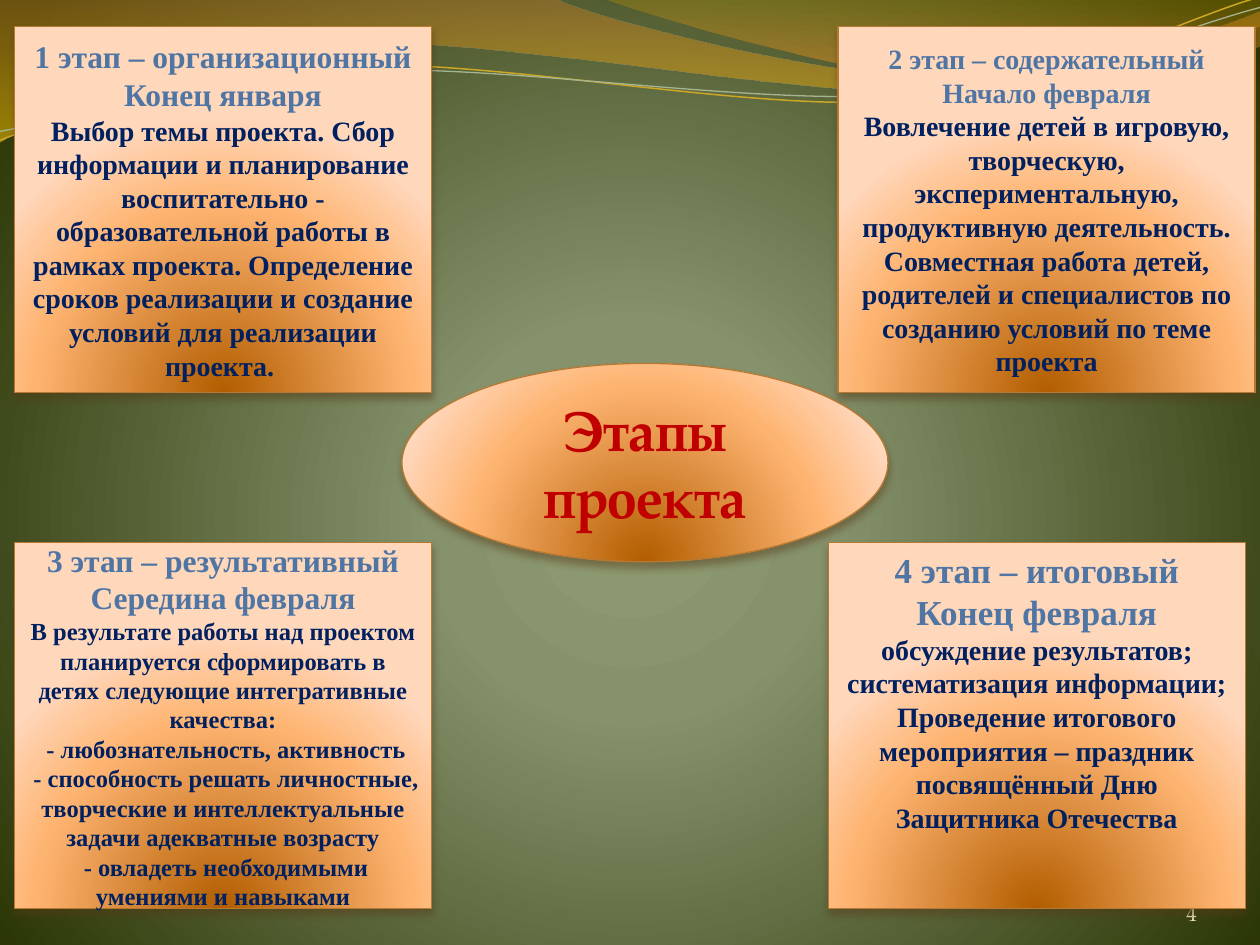
from lxml import etree
from pptx import Presentation
from pptx.dml.color import RGBColor
from pptx.enum.shapes import MSO_SHAPE
from pptx.enum.text import MSO_ANCHOR, PP_ALIGN
from pptx.oxml.ns import qn
from pptx.util import Pt

RECT, OVAL = MSO_SHAPE.RECTANGLE, MSO_SHAPE.OVAL
TOP, MIDDLE, BOTTOM = MSO_ANCHOR.TOP, MSO_ANCHOR.MIDDLE, MSO_ANCHOR.BOTTOM
CENTER, RIGHT = PP_ALIGN.CENTER, PP_ALIGN.RIGHT

OLIVE = RGBColor(0x8F, 0x9B, 0x72)
MOSS = RGBColor(0x86, 0x92, 0x6C)
FOREST = RGBColor(0x27, 0x32, 0x00)
BRONZE = RGBColor(0xC0, 0x7A, 0x28)
YELLOW = RGBColor(0xF7, 0xBF, 0x00)
MUSTARD = RGBColor(0xC0, 0x97, 0x09)
AMBER = RGBColor(0xF5, 0x93, 0x20)
GOLD = RGBColor(0xCC, 0xA6, 0x24)
SAGE = RGBColor(0xA5, 0xB5, 0x92)
RUST = RGBColor(0xB2, 0x5D, 0x00)
PEACH = RGBColor(0xFE, 0xB4, 0x71)
CREAM = RGBColor(0xFF, 0xD7, 0xBB)
COPPER = RGBColor(0xB6, 0x79, 0x33)
SHADE = RGBColor(0x57, 0x3A, 0x17)
STEEL = RGBColor(0x4E, 0x75, 0xA3)
NAVY = RGBColor(0x00, 0x20, 0x60)
RED = RGBColor(0xC0, 0x00, 0x00)
IVORY = RGBColor(0xF3, 0xEF, 0xC0)

SERIF, TITLE = "Times New Roman", "TeX Gyre Pagella"
WIDTH, HEIGHT = 720, 540
CARD_W, CARD_H = 238.3, 209.5
LEFT, HIGH, LOW = 8.3, 15, 309.8
TILT = 357.3

BANDS = [
    ([(0, 0), (317, -0.7), (343, 12, 478, 45.4, 546, 45.4),
      (614, 45.4, 690, 18.7, 720, 6.5), (720.7, 26),
      (708, 31.7, 626, 54.7, 537, 54), (448, 54, 275, 20, 185, 24.5),
      (93, 26, 33, 59.8, -0.7, 81.4), (0, 0)],
     [(0, BRONZE, 45), (100, YELLOW, 55)]),
    ([(345, -0.7), (366, 8, 491, 44.6, 553.7, 46.8),
      (616, 49.7, 692, 23, 720, 15), (720, 0), (345, -0.7)],
     [(0, MUSTARD, 30), (80, AMBER, 45)]),
]
WAVES = [
    ([(-1.4, 63.1), (33.8, 51.7, 114.1, 29.4, 199.8, 29.9),
      (284.8, 30.3, 425.9, 67.2, 512.5, 64.9),
      (599.1, 62.3, 676.5, 25.7, 720.2, 15.6)], GOLD, 0.85),
    ([(-1.1, 58.1), (32.9, 53.6, 118.2, 32.6, 204.1, 33),
      (290.4, 33.4, 428.9, 63.8, 515.5, 61.4),
      (601.5, 59.6, 678.4, 30, 721.4, 21.3)], SAGE, 0.75),
]
CARDS = [
    (LEFT, LOW, MIDDLE, 18, 14,
     ["3 этап – результативный", "Середина февраля"],
     ["В результате работы над проектом планируется сформировать в детях "
      "следующие интегративные качества:",
      " - любознательность, активность",
      " - способность решать личностные, творческие и интеллектуальные "
      "задачи адекватные возрасту",
      " - овладеть необходимыми умениями и навыками"]),
    (478.9, HIGH, MIDDLE, 16, 16,
     ["2 этап – содержательный", "Начало февраля"],
     ["Вовлечение детей в игровую, творческую, экспериментальную, "
      "продуктивную деятельность. Совместная работа детей, родителей и "
      "специалистов по созданию условий по теме проекта"]),
    (LEFT, HIGH, MIDDLE, 18, 16,
     ["1 этап – организационный", "Конец января"],
     ["Выбор темы проекта. Сбор информации и планирование воспитательно - "
      "образовательной работы в рамках проекта. Определение сроков "
      "реализации и создание условий для реализации проекта. "]),
    (473.3, LOW, TOP, 20, 16,
     ["4 этап – итоговый", "Конец февраля"],
     ["обсуждение результатов; систематизация информации; Проведение "
      "итогового мероприятия – праздник посвящённый Дню Защитника Отечества"]),
]


def add_node(host, tag, **attrs):
    node = etree.SubElement(host, qn(tag))
    for name, value in attrs.items():
        node.set(name, str(value))
    return node


def add_tint(host, color, alpha):
    tint = add_node(host, "a:srgbClr", val=color)
    if alpha < 100:
        add_node(tint, "a:alpha", val=alpha * 1000)


def blend(host, fill, stops, focus=None):
    fill.gradient()
    grad = next(host.element.iter(qn("a:gradFill")))
    for child in list(grad):
        grad.remove(child)
    steps = add_node(grad, "a:gsLst")
    for place, color, alpha in stops:
        add_tint(add_node(steps, "a:gs", pos=place * 1000), color, alpha)
    if focus:
        sides = {side: part * 1000 for side, part in zip("ltrb", focus)}
        add_node(add_node(grad, "a:path", path="circle"), "a:fillToRect", **sides)
    else:
        add_node(grad, "a:lin", ang=5400000, scaled=0)


def trace(shapes, box, route, closed):
    ends = [(Pt(step[-2]), Pt(step[-1])) for step in route]
    pen = shapes.build_freeform(*ends[0], scale=1.0)
    pen.add_line_segments(ends[1:], close=closed)
    shape = pen.convert_to_shape()
    x, y = shape.left, shape.top
    lines = list(shape.element.iter(qn("a:lnTo")))
    for line, step in zip(lines, route[1:]):
        if len(step) == 6:
            curve = etree.Element(qn("a:cubicBezTo"))
            for i in (0, 2, 4):
                add_node(curve, "a:pt", x=Pt(step[i]) - x, y=Pt(step[i + 1]) - y)
            line.getparent().replace(line, curve)
    shape.left, shape.top = x + Pt(box[0]), y + Pt(box[1])
    shape.shadow.inherit = False
    return shape


def draw_top(slide, box):
    for route, stops in BANDS:
        band = trace(slide.shapes, box, route, True)
        blend(band, band.fill, stops)
        band.line.fill.background()
    group = slide.shapes.add_group_shape()
    for route, color, weight in WAVES:
        wave = trace(group.shapes, box, route, False)
        wave.rotation = TILT
        wave.fill.background()
        wave.line.color.rgb = color
        wave.line.width = Pt(weight)


def write(frame, lines, anchor, align):
    frame.word_wrap = True
    frame.vertical_anchor = anchor
    for i, (text, size, font, color, bold) in enumerate(lines):
        para = frame.add_paragraph() if i else frame.paragraphs[0]
        para.text = text
        para.alignment = align
        style = para.runs[0].font
        style.size, style.name, style.bold = Pt(size), font, bold
        style.color.rgb = color


def draw_panel(slide, box, kind, lines, anchor=MIDDLE):
    panel = slide.shapes.add_shape(kind, *map(Pt, box))
    blend(panel, panel.fill, [(0, RUST, 100), (68, PEACH, 100), (100, CREAM, 100)],
          (50, 130, 50, -30))
    panel.line.color.rgb = COPPER
    panel.line.width = Pt(0.75)
    panel.shadow.inherit = False
    glow = add_node(next(panel.element.iter(qn("a:effectLst"))), "a:outerShdw",
                    blurRad=Pt(4.5), dist=Pt(3), dir=5400000, rotWithShape=0)
    add_tint(glow, SHADE, 48)
    write(panel.text_frame, lines, anchor, CENTER)


def draw_card(slide, box, anchor, big, small, heads, body):
    lines = [(text, big, SERIF, STEEL, True) for text in heads]
    lines += [(text, small, SERIF, NAVY, True) for text in body]
    draw_panel(slide, box, RECT, lines, anchor)


def draw_page(slide, box):
    frame = slide.shapes.add_textbox(*map(Pt, box)).text_frame
    frame.margin_left = frame.margin_right = 0
    frame.margin_top = frame.margin_bottom = 0
    write(frame, [("4", 12, TITLE, IVORY, False)], BOTTOM, RIGHT)


def main():
    deck = Presentation()
    deck.slide_width, deck.slide_height = Pt(WIDTH), Pt(HEIGHT)
    slide = deck.slides.add_slide(deck.slide_layouts[6])
    blend(slide, slide.background.fill,
          [(0, OLIVE, 100), (25, MOSS, 100), (100, FOREST, 100)],
          (10, 110, 10, 100))
    draw_top(slide, (0, 0))
    draw_panel(slide, (229.7, 207.7, 277.7, 113.3), OVAL,
               [("Этапы проекта", 32, TITLE, RED, True)])
    draw_page(slide, (624.2, 500.4, 59.8, 28.8))
    for x, y, *parts in CARDS:
        draw_card(slide, (x, y, CARD_W, CARD_H), *parts)
    deck.save("out.pptx")


if __name__ == "__main__":
    main()
